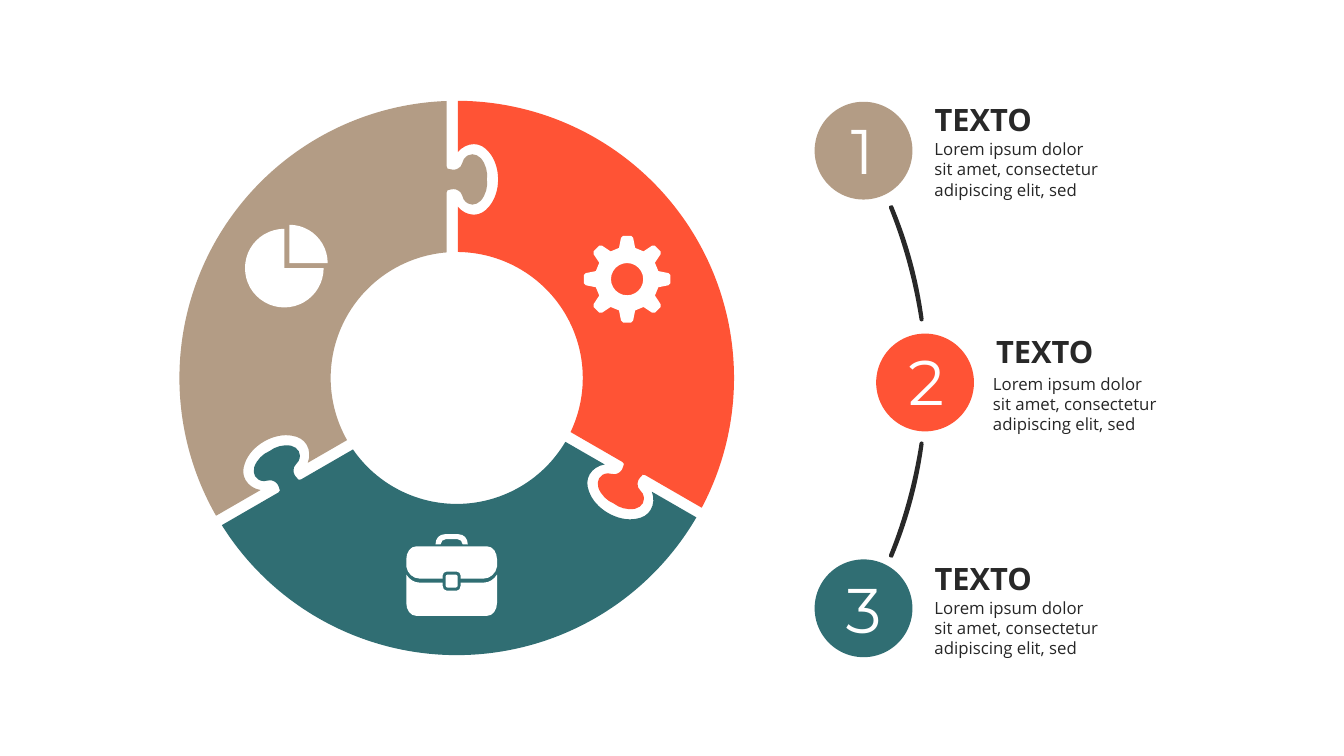
import math
import pptx
import pptx.util
import pptx.dml.color
import pptx.enum.shapes
import pptx.enum.text
import pptx.oxml
import pptx.oxml.ns

Inches = pptx.util.Inches

COLORS = {"tan": "B39C85", "orange": "FF5335", "teal": "306E73",
          "white": "FFFFFF", "body": "262626", "dark": "282828"}
BODY = "Lorem ipsum dolor sit amet, consectetur adipiscing elit, sed"

# Legend: number, colour, circle, digit box, title box, body box
LEGEND = [
    ("1", "tan", (8.08, 1.01), (8.44, 1.11), (9.27, 1.0), (9.17, 1.33)),
    ("2", "orange", (8.69, 3.31), (9.01, 3.4), (9.88, 3.3), (9.75, 3.66)),
    ("3", "teal", (8.08, 5.55), (8.39, 5.66), (9.27, 5.55), (9.17, 5.88)),
]
CIRCLE = 0.97

# Outlines hold a start point, then lines (pairs) and cubic curves (sextuples)
# Ring; tab and notch are half outlines (across the joint, along it)
RING = (4.53, 3.75)
OUTER, INNER, JOINT = 2.75, 1.25, 1.97
PIECES = [("tan", 240), ("orange", 0), ("teal", 120)]
TAB_EDGE, NOTCH_EDGE = -0.1, 0.01
TAB = [(-0.1, 0.13), (-0.1, 0.11, -0.09, 0.1, -0.06, 0.1),
       (-0.02, 0.09, 0.01, 0.1, 0.04, 0.13), (0.05, 0.15, 0.06, 0.17, 0.07, 0.2),
       (0.12, 0.27, 0.19, 0.26, 0.24, 0.21), (0.29, 0.15, 0.31, 0.07, 0.3, 0)]
NOTCH = [(0.01, 0.27), (0.05, 0.32, 0.11, 0.35, 0.17, 0.35),
         (0.23, 0.35, 0.28, 0.32, 0.32, 0.27), (0.38, 0.2, 0.41, 0.1, 0.41, 0)]

# Briefcase: right halves of its parts, measured from its middle axis
CASE_X = 4.48
CASE = [
    [(0, 5.3), (0.07, 5.3), (0.12, 5.3, 0.16, 5.34, 0.16, 5.4), (0.11, 5.4),
     (0.11, 5.37, 0.08, 5.35, 0.06, 5.35), (0, 5.35)],
    [(0, 5.42), (0.35, 5.42), (0.41, 5.42, 0.45, 5.48, 0.45, 5.55), (0.45, 5.62),
     (0.44, 5.69, 0.38, 5.74, 0.32, 5.74), (0.09, 5.74), (0.09, 5.71),
     (0.09, 5.69, 0.07, 5.67, 0.05, 5.67), (0, 5.67)],
    [(0, 5.86), (0.05, 5.86), (0.07, 5.86, 0.09, 5.84, 0.09, 5.81), (0.09, 5.78),
     (0.32, 5.78), (0.37, 5.78, 0.42, 5.75, 0.45, 5.7), (0.45, 5.98),
     (0.45, 6.05, 0.41, 6.11, 0.35, 6.11), (0, 6.11)],
    [(0, 5.7), (0.04, 5.7), (0.05, 5.7, 0.06, 5.71, 0.06, 5.72), (0.06, 5.81),
     (0.06, 5.82, 0.05, 5.83, 0.04, 5.83), (0, 5.83)],
]

# Gear and pie icons
GEAR, GEAR_HOLE, TEETH = (6.22, 2.77), 0.16, 8
TOOTH = [(-0.08, -0.31), (-0.06, -0.41), (-0.04, -0.43),
         (0.04, -0.43), (0.06, -0.41), (0.08, -0.31)]
PIE, PIE_R = (2.82, 2.66), 0.39
SLICE, SLICE_R = (2.87, 2.61), 0.38

# Curved link between circles; the lower link mirrors it
LINK = [(9.14, 3.19), (9.13, 3.19, 9.12, 3.18, 9.12, 3.17),
        (9.06, 2.79, 8.96, 2.42, 8.82, 2.07), (8.81, 2.05, 8.82, 2.04, 8.83, 2.04),
        (8.85, 2.03, 8.86, 2.04, 8.86, 2.05), (9.01, 2.41, 9.11, 2.78, 9.16, 3.16),
        (9.16, 3.18, 9.16, 3.19, 9.14, 3.19)]
MIRROR_Y = 3.785


def points(seg):
    return list(zip(seg[::2], seg[1::2]))


def transform(segs, move):
    return [sum((move(x, y) for x, y in points(seg)), ()) for seg in segs]


def shift(segs, origin):
    return transform(segs, lambda x, y: (x + origin[0], y + origin[1]))


def rotate(segs, degrees):
    c, s = math.cos(math.radians(degrees)), math.sin(math.radians(degrees))
    return transform(segs, lambda x, y: (x * c - y * s, x * s + y * c))


def backwards(segs):
    pts = [pt for seg in segs for pt in points(seg)][::-1]
    result, i = [pts[0]], 1
    for seg in reversed(segs[1:]):
        n = len(seg) // 2
        result.append(sum(pts[i:i + n], ()))
        i += n
    return result


def arc(radius, start, end):
    """Curves about 0, 0; degrees clockwise from the top."""
    n = math.ceil(abs(end - start) / 30)
    step = math.radians(end - start) / n
    k = 4 / 3 * math.tan(step / 4)
    first = (0, -radius)
    dx, dy = radius * math.sin(step), -radius * math.cos(step)
    curve = (k * radius, -radius, dx + k * dy, dy - k * dx, dx, dy)
    turns = [start + math.degrees(step) * i for i in range(n)]
    return rotate([first], start) + [rotate([curve], t)[0] for t in turns]


def joint(half):
    """Full joint on the vertical axis, from the hub outwards."""
    far = transform(half, lambda x, v: (x, -JOINT - v))
    near = transform(half, lambda x, v: (x, -JOINT + v))
    return near + backwards(far)[1:]


def edge_angle(offset, radius):
    return math.degrees(math.asin(offset / radius))


def paint(sp, color):
    sp.shadow.inherit = False
    sp.fill.solid()
    sp.fill.fore_color.rgb = pptx.dml.color.RGBColor.from_string(COLORS[color])
    sp.line.fill.background()


def add_outline(contours, color):
    fb = None
    for segs in contours:
        pts = [(Inches(x), Inches(y)) for seg in segs for x, y in points(seg)]
        if fb is None:
            fb = slide.shapes.build_freeform(*pts[0], scale=1.0)
        else:
            fb.move_to(*pts[0])
        fb.add_line_segments(pts[1:], close=True)
    sp = fb.convert_to_shape()
    # Each run of three lines that stands for a curve becomes one
    lines = iter(list(sp._element.iter(pptx.oxml.ns.qn("a:lnTo"))))
    for seg in (seg for segs in contours for seg in segs[1:]):
        parts = [next(lines) for _ in points(seg)]
        if len(parts) == 3:
            curve = pptx.oxml.parse_xml(
                "<a:cubicBezTo %s/>" % pptx.oxml.ns.nsdecls("a"))
            parts[0].addprevious(curve)
            for part in parts:
                curve.append(part[0])
                part.getparent().remove(part)
    paint(sp, color)


def add_text(text, at, size, font, points_, color, bold=False, inset=(0, 0)):
    sp = slide.shapes.add_textbox(*map(Inches, at + size))
    tf = sp.text_frame
    tf.word_wrap = True
    tf.vertical_anchor = pptx.enum.text.MSO_ANCHOR.TOP
    tf.margin_left = tf.margin_right = Inches(inset[0])
    tf.margin_top = tf.margin_bottom = Inches(inset[1])
    tf.text = text
    r = tf.paragraphs[0].runs[0]
    r.font.name, r.font.size, r.font.bold = font, pptx.util.Pt(points_), bold
    r.font.color.rgb = pptx.dml.color.RGBColor.from_string(COLORS[color])


prs = pptx.Presentation()
prs.slide_width, prs.slide_height = Inches(13.33), Inches(7.5)
slide = prs.slides.add_slide(prs.slide_layouts[6])

# Legend
for number, color, circle, digit, title, body in LEGEND:
    add_text(BODY, body, (1.86, 0.7), "Open Sans", 12, "body", inset=(0.1, 0.05))
    add_text("TEXTO", title, (1.62, 0.5), "Open Sans", 22, "dark", bold=True)
    sp = slide.shapes.add_shape(pptx.enum.shapes.MSO_SHAPE.OVAL,
                                *map(Inches, circle + (CIRCLE, CIRCLE)))
    paint(sp, color)
    add_text(number, digit, (0.73, 0.92), "Montserrat", 45, "white")

# Links between the circles
add_outline([LINK], "dark")
add_outline([transform(LINK, lambda x, y: (x, 2 * MIRROR_Y - y))], "dark")

# Puzzle ring: outer arc, tab edge, inner arc, notch edge
piece = (arc(OUTER, edge_angle(NOTCH_EDGE, OUTER), 120 + edge_angle(TAB_EDGE, OUTER))
         + rotate(backwards(joint(TAB)), 120)
         + arc(INNER, 120 + edge_angle(TAB_EDGE, INNER), edge_angle(NOTCH_EDGE, INNER))
         + joint(NOTCH))
for color, turn in PIECES:
    add_outline([shift(rotate(piece, turn), RING)], color)

# Briefcase icon
add_outline([shift(half + backwards(transform(half, lambda x, y: (-x, y)))[1:],
                   (CASE_X, 0)) for half in CASE], "white")

# Pie icon
add_outline([shift([(0, 0)] + arc(PIE_R, 90, 360), PIE),
             shift([(0, 0)] + arc(SLICE_R, 0, 90), SLICE)], "white")

# Gear icon
teeth = [pt for i in range(TEETH) for pt in rotate(TOOTH, i * 360 / TEETH)]
add_outline([shift(teeth, GEAR), shift(arc(GEAR_HOLE, 360, 0), GEAR)], "white")

prs.save("out.pptx")
